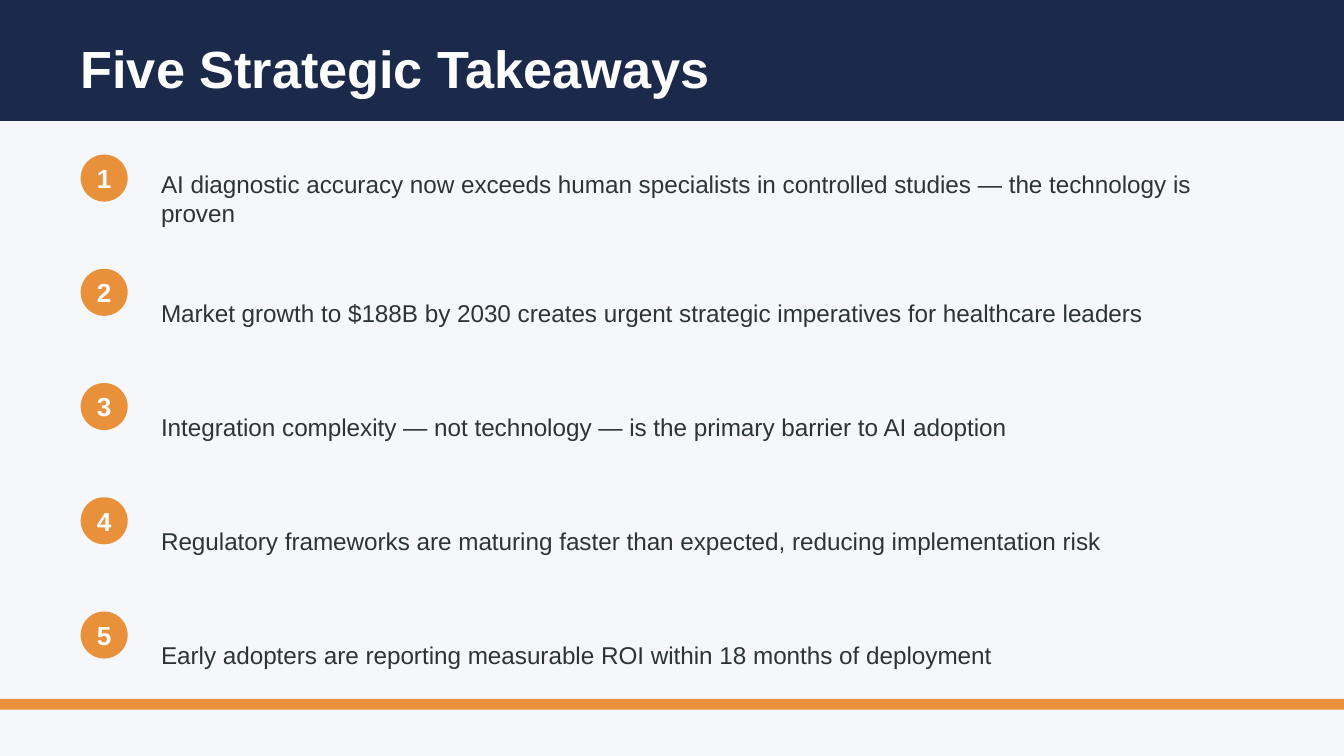
import pptx
import pptx.dml.color
import pptx.enum.shapes
import pptx.enum.text
import pptx.util

PX = 4572
FONT = "Arial"
HUES = {"page": "F5F7FA", "navy": "1B2A4A", "gold": "E8913A", "white": "FFFFFF", "ink": "2D3436"}
POINTS = [
    "AI diagnostic accuracy now exceeds human specialists in controlled studies — the technology is proven",
    "Market growth to $188B by 2030 creates urgent strategic imperatives for healthcare leaders",
    "Integration complexity — not technology — is the primary barrier to AI adoption",
    "Regulatory frameworks are maturing faster than expected, reducing implementation risk",
    "Early adopters are reporting measurable ROI within 18 months of deployment",
]
KINDS = pptx.enum.shapes.MSO_SHAPE
ALIGN = pptx.enum.text.PP_ALIGN


def paint(fill, hue):
    """Give a fill one solid colour."""
    fill.solid()
    fill.fore_color.rgb = pptx.dml.color.RGBColor.from_string(HUES[hue])


def place(shape, *box):
    """Move a shape to a box given in px."""
    shape.left, shape.top, shape.width, shape.height = (n * PX for n in box)


def draw(slide, kind, hue, *box):
    """Add a flat, borderless shape."""
    shape = slide.shapes.add_shape(kind, *(n * PX for n in box))
    shape.shadow.inherit = False
    paint(shape.fill, hue)
    shape.line.fill.background()
    return shape


def write(shape, text, size, hue, bold=False, align=ALIGN.LEFT):
    """Write one run, centred in height."""
    frame = shape.text_frame
    frame.auto_size = pptx.enum.text.MSO_AUTO_SIZE.NONE
    frame.word_wrap = True
    frame.vertical_anchor = pptx.enum.text.MSO_ANCHOR.MIDDLE
    para = frame.paragraphs[0]
    para.alignment = align
    run = para.add_run()
    run.text = text
    run.font.name = FONT
    run.font.size = pptx.util.Pt(size)
    run.font.bold = bold
    paint(run.font.fill, hue)


def header(slide, x, y, w, h):
    """Build the title band."""
    draw(slide, KINDS.RECTANGLE, "navy", x, y, w, h)
    title = slide.shapes.title
    title.element.getparent().append(title.element)
    place(title, x + 100, y + 40, w - 200, h - 60)
    write(title, "Five Strategic Takeaways", 28, "white", True)


def row(slide, num, text, x, y, w, h):
    """Build one numbered takeaway."""
    badge = draw(slide, KINDS.OVAL, "gold", x, y + 10, 70, 70)
    frame = badge.text_frame
    frame.margin_left = frame.margin_right = frame.margin_top = frame.margin_bottom = 0
    write(badge, str(num), 14, "white", True, ALIGN.CENTER)
    label = slide.shapes.add_textbox(0, 0, 0, 0)
    place(label, x + 100, y, w - 100, h)
    write(label, text, 13, "ink")


def points(slide, x, y, w, h):
    """Stack the takeaways at an even pitch."""
    gap = 20
    tall = (h + gap) // len(POINTS) - gap
    for i, text in enumerate(POINTS):
        row(slide, i + 1, text, x, y + i * (tall + gap), w, tall)


def main():
    """Build and save the slide."""
    deck = pptx.Presentation()
    deck.slide_width, deck.slide_height = 2000 * PX, 1125 * PX
    slide = deck.slides.add_slide(deck.slide_layouts.get_by_name("Title Only"))
    paint(slide.background.fill, "page")
    header(slide, 0, 0, 2000, 180)
    points(slide, 120, 220, 1780, 830)
    draw(slide, KINDS.RECTANGLE, "gold", 0, 1040, 2000, 16)
    deck.save("out.pptx")


if __name__ == "__main__":
    main()
